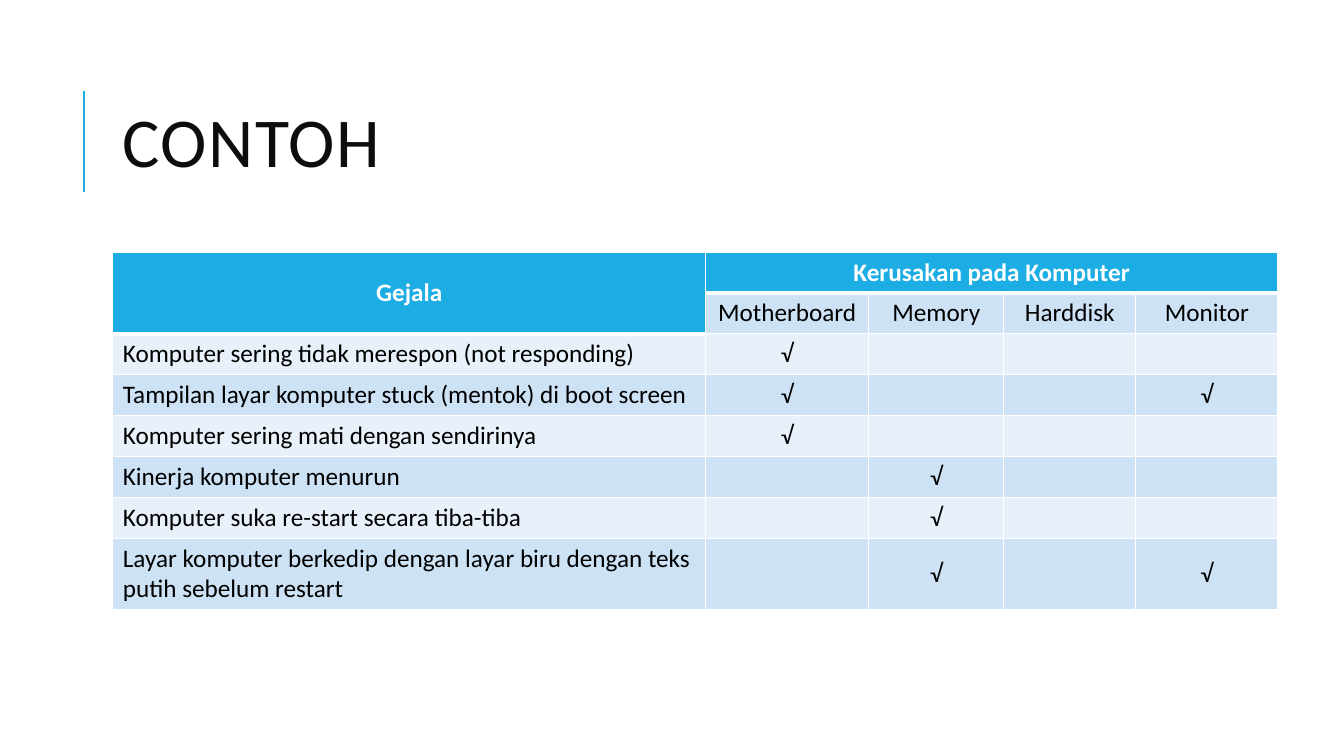
from lxml import etree
from pptx import Presentation
from pptx.dml.color import RGBColor
from pptx.enum import shapes, text
from pptx.oxml.ns import qn
from pptx.util import Pt

TITLE = "CONTOH"
HEADS = ("Gejala", "Kerusakan pada Komputer")
PARTS = ["Motherboard", "Memory", "Harddisk", "Monitor"]
SIGNS = [
    ("Komputer sering tidak merespon (not responding)", {"Motherboard"}),
    ("Tampilan layar komputer stuck (mentok) di boot screen", {"Motherboard", "Monitor"}),
    ("Komputer sering mati dengan sendirinya", {"Motherboard"}),
    ("Kinerja komputer menurun", {"Memory"}),
    ("Komputer suka re-start secara tiba-tiba", {"Memory"}),
    ("Layar komputer berkedip dengan layar biru dengan teks putih sebelum restart",
     {"Memory", "Monitor"}),
]
COLORS = {"accent": "1CADE4", "dark": "CDE3F5", "light": "E8F1FA",
          "white": "FFFFFF", "black": "000000", "title": "0D0D0D"}
WIDTHS = [423.4, 116.6, 96.5, 94.3, 101.5]
HEIGHTS = [29.2] * 7 + [50.4]
LEFT, TOP = 80.6, 180


def rgb(name):
    return RGBColor.from_string(COLORS[name])


def write(frame, words, size=18, color="black", bold=False, center=False):
    para = frame.paragraphs[0]
    para.alignment = text.PP_ALIGN.CENTER if center else text.PP_ALIGN.LEFT
    run = para.add_run()
    run.text = words
    font = run.font
    font.name, font.size, font.bold = "Calibri", Pt(size), bold
    font.color.rgb = rgb(color)
    return para, run


def edge(cell, **widths):
    """Draw white borders; keys are L, R, T, B and values are points."""
    props = cell._tc.get_or_add_tcPr()
    for spot, (side, width) in enumerate(widths.items()):
        line = etree.Element(qn("a:ln" + side), w=str(Pt(width)))
        fill = etree.SubElement(line, qn("a:solidFill"))
        etree.SubElement(fill, qn("a:srgbClr"), val=COLORS["white"])
        props.insert(spot, line)


def add_title(slide):
    title = slide.shapes.title
    title.left, title.top, title.width, title.height = map(Pt, (LEFT, 46, 765.4, 118))
    title.text_frame.vertical_anchor = text.MSO_ANCHOR.MIDDLE
    para, run = write(title.text_frame, TITLE, size=50, color="title")
    para.line_spacing = 0.8
    run.font._element.set("spc", "100")
    rule = slide.shapes.add_connector(
        shapes.MSO_CONNECTOR.STRAIGHT, Pt(60), Pt(136.8), Pt(60), Pt(64.8))
    rule.line.color.rgb = rgb("accent")
    rule.line.width = Pt(1.5)
    etree.SubElement(rule._element.spPr, qn("a:effectLst"))


def add_grid(slide):
    rows = [[HEADS[0], HEADS[1], "", "", ""], [""] + PARTS]
    rows += [[sign] + ["√" if part in hits else "" for part in PARTS]
             for sign, hits in SIGNS]
    table = slide.shapes.add_table(
        len(rows), len(WIDTHS), Pt(LEFT), Pt(TOP),
        Pt(sum(WIDTHS)), Pt(sum(HEIGHTS))).table
    for col, width in zip(table.columns, WIDTHS):
        col.width = Pt(width)
    for row, height in zip(table.rows, HEIGHTS):
        row.height = Pt(height)
    table.cell(0, 0).merge(table.cell(1, 0))
    table.cell(0, 1).merge(table.cell(0, 4))

    for r, row in enumerate(rows):
        for c, words in enumerate(row):
            cell = table.cell(r, c)
            last = 1 if c == 0 else 0
            head = r <= last
            cell.vertical_anchor = text.MSO_ANCHOR.MIDDLE
            cell.fill.solid()
            cell.fill.fore_color.rgb = rgb(
                "accent" if head else "dark" if r % 2 else "light")
            edge(cell, L=1, R=1, T=3 if r == last + 1 else 1,
                 B=3 if head else 1)
            if words:
                write(cell.text_frame, words, bold=head,
                      color="white" if head else "black", center=head or c > 0)


def main():
    deck = Presentation()
    deck.slide_width, deck.slide_height = Pt(960), Pt(540)
    slide = deck.slides.add_slide(deck.slide_layouts[5])
    add_title(slide)
    add_grid(slide)
    deck.save("out.pptx")


if __name__ == "__main__":
    main()
